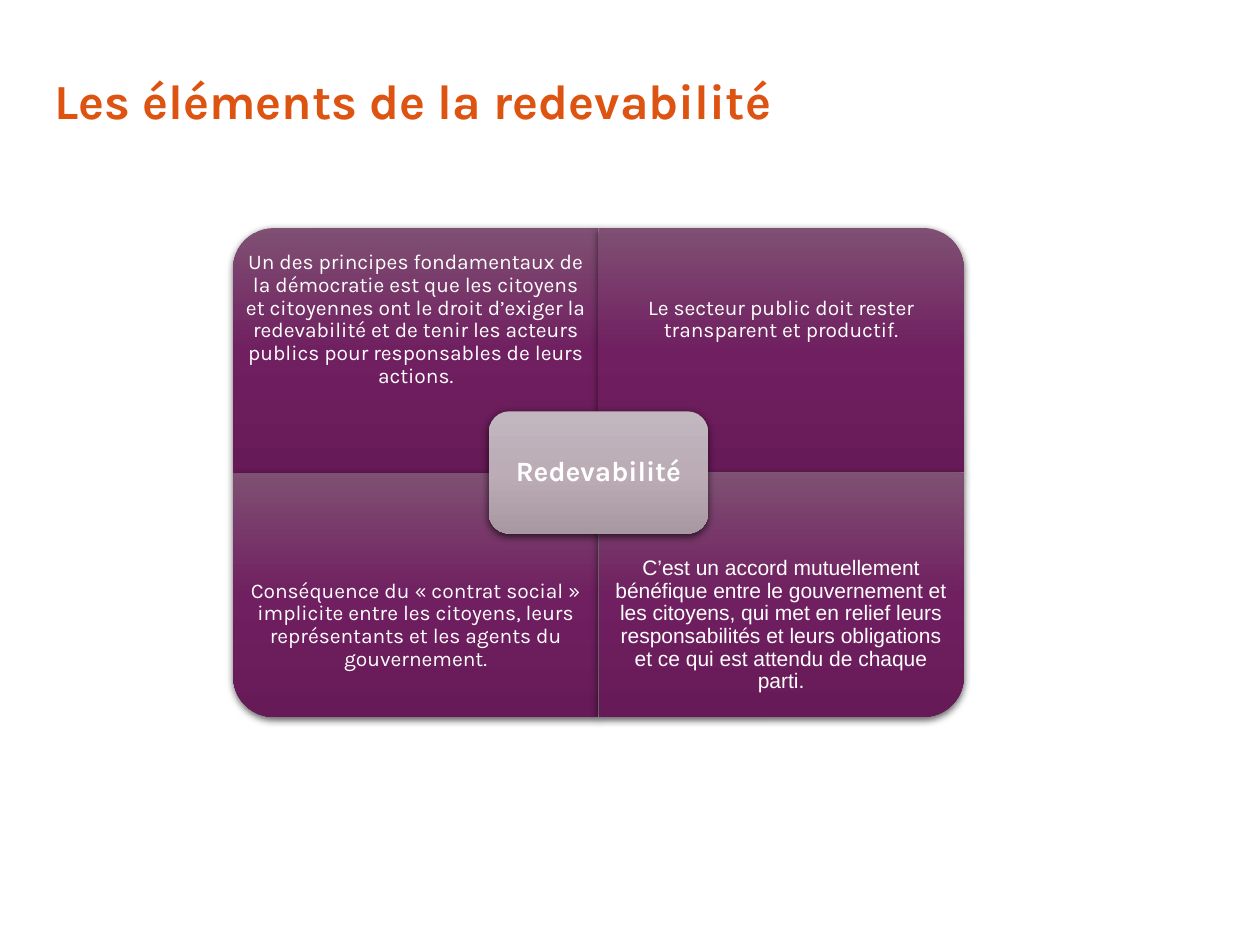
from lxml import etree
from pptx import Presentation
from pptx.dml.color import RGBColor
from pptx.enum.shapes import MSO_SHAPE
from pptx.enum.text import MSO_ANCHOR, PP_ALIGN
from pptx.oxml import parse_xml
from pptx.oxml.ns import nsdecls, qn
from pptx.util import Inches, Pt

COLORS = {"title": "DD5412", "text": "FFFFFF", "shadow": "000000"}
GRADIENTS = {
    "quadrant": ("7F5073", "702060", "661A57"),
    "center": ("C2B6BF", "BBACB6", "A798A2"),
}
QUADRANTS = [
    (0, 0, 270, "Karla", "Un des principes fondamentaux de la démocratie est que les citoyens "
     "et citoyennes ont le droit d’exiger la redevabilité et de tenir les acteurs publics "
     "pour responsables de leurs actions."),
    (1, 0, 0, "Karla", "Le secteur public doit rester transparent et productif."),
    (0, 1, 180, "Karla", "Conséquence du « contrat social » implicite entre les citoyens, "
     "leurs représentants et les agents du gouvernement."),
    (1, 1, 90, "Arial", "C’est un accord mutuellement bénéfique entre le gouvernement et les "
     "citoyens, qui met en relief leurs responsabilités et leurs obligations et ce qui est "
     "attendu de chaque parti."),
]


def style_text(tf, text, size, font, color, align, bold=False):
    tf.text = text
    tf.word_wrap = True
    tf.vertical_anchor = MSO_ANCHOR.MIDDLE
    p = tf.paragraphs[0]
    p.alignment = align
    p.line_spacing = 0.9
    p.space_before = Pt(0)
    f = p.runs[0].font
    f.size, f.name, f.bold = Pt(size), font, bold
    f.color.rgb = RGBColor.from_string(color)


def add_label(s, left, top, width, height, text, size, font, inset, bold=False):
    tf = s.shapes.add_textbox(Inches(left), Inches(top), Inches(width), Inches(height)).text_frame
    tf.margin_left = tf.margin_right = tf.margin_top = tf.margin_bottom = Inches(inset)
    style_text(tf, text, size, font, COLORS["text"], PP_ALIGN.CENTER, bold)


def add_panel(s, kind, left, top, width, height, gradient, rotation=0):
    w, h = (height, width) if rotation % 180 else (width, height)
    x, y = left + (width - w) / 2, top + (height - h) / 2
    sp = s.shapes.add_shape(kind, Inches(x), Inches(y), Inches(w), Inches(h))
    sp.rotation = rotation
    sp.line.fill.background()
    sp.shadow.inherit = False
    stops = "".join(f'<a:gs pos="{i * 50000}"><a:srgbClr val="{c}"/></a:gs>'
                    for i, c in enumerate(GRADIENTS[gradient]))
    fill = parse_xml(f'<a:gradFill {nsdecls("a")} rotWithShape="0"><a:gsLst>{stops}</a:gsLst>'
                     '<a:lin ang="5400000" scaled="0"/></a:gradFill>')
    props = sp._element.spPr
    props.find(qn("a:ln")).addprevious(fill)
    shadow = etree.SubElement(props.find(qn("a:effectLst")), qn("a:outerShdw"),
                              blurRad=str(Pt(4.5)), dist=str(Pt(1.5)), dir="5400000",
                              algn="ctr", rotWithShape="0")
    color = etree.SubElement(shadow, qn("a:srgbClr"), val=COLORS["shadow"])
    etree.SubElement(color, qn("a:alpha"), val="63000")


def add_title(s, left, top, width, height, text):
    title = s.shapes.title
    title.left, title.top = Inches(left), Inches(top)
    title.width, title.height = Inches(width), Inches(height)
    style_text(title.text_frame, text, 28, "Karla", COLORS["title"], PP_ALIGN.LEFT, True)


def add_matrix(s, left, top, width, height):
    w, h = width / 2, height / 2
    label_h = h * 0.75
    for col, row, rotation, font, text in QUADRANTS:
        x, y = left + col * w, top + row * h
        add_panel(s, MSO_SHAPE.ROUND_1_RECTANGLE, x, y, w, h, "quadrant", rotation)
        add_label(s, x, y + row * (h - label_h), w, label_h, text, 12, font, 0.09)
    cw, ch = w * 0.6, h / 2
    x, y = left + w - cw / 2, top + h - ch / 2
    add_panel(s, MSO_SHAPE.ROUNDED_RECTANGLE, x, y, cw, ch, "center")
    pad = 0.05
    add_label(s, x + pad, y + pad, cw - 2 * pad, ch - 2 * pad,
              "Redevabilité", 16, "Karla", 0.07, True)


def main():
    prs = Presentation()
    prs.slide_width, prs.slide_height = Inches(10), Inches(7.5)
    s = prs.slides.add_slide(prs.slide_layouts[5])
    add_title(s, 0.33, 0.53, 9.35, 0.58, "Les éléments de la redevabilité")
    add_matrix(s, 1.85, 1.81, 5.8, 3.88)
    prs.save("out.pptx")


if __name__ == "__main__":
    main()
